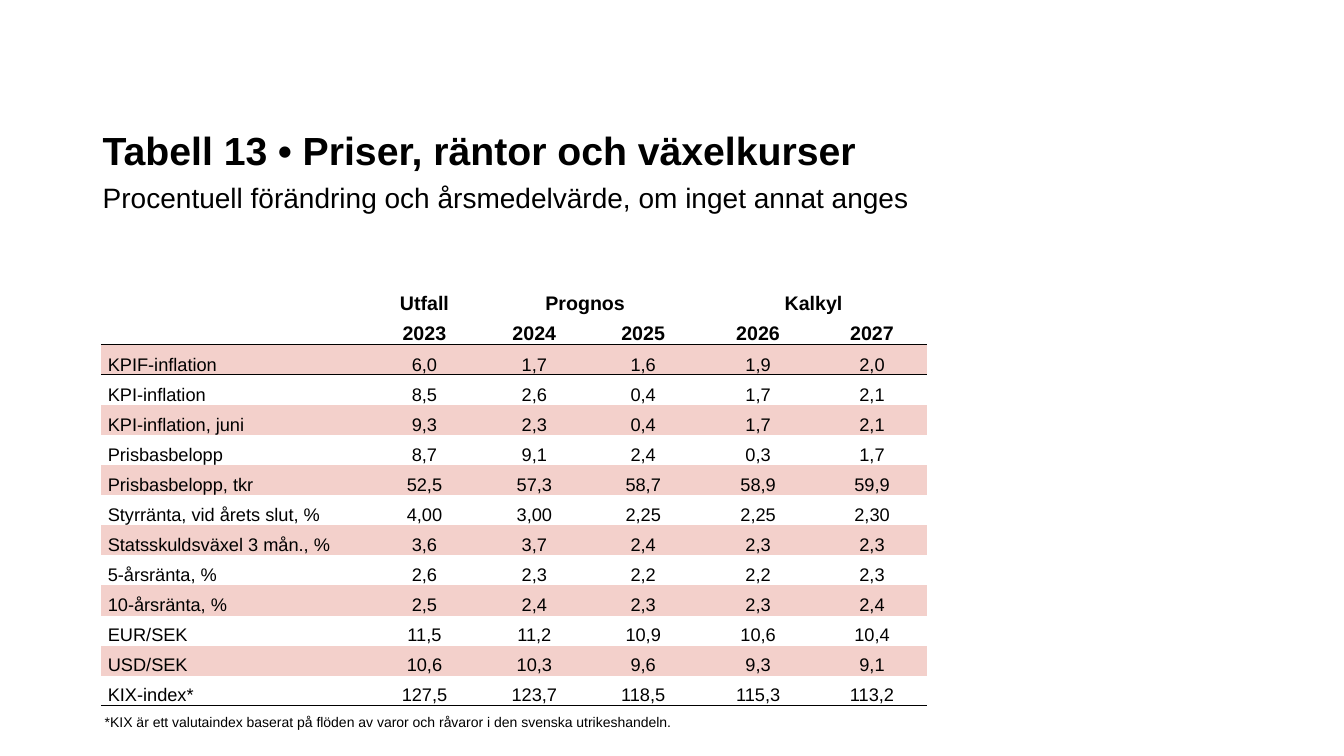
import pptx
import pptx.dml.color
import pptx.enum.text
import pptx.oxml
import pptx.oxml.ns
import pptx.util

TITLE = "Tabell 13 • Priser, räntor och växelkurser"
SUB = "Procentuell förändring och årsmedelvärde, om inget annat anges"
NOTE = ("*KIX är ett valutaindex baserat på flöden av varor och råvaror "
        "i den svenska utrikeshandeln.")
ROWS = [
    ("", "Utfall", "Prognos", "", "Kalkyl", ""),
    ("", "2023", "2024", "2025", "2026", "2027"),
    ("KPIF-inflation", "6,0", "1,7", "1,6", "1,9", "2,0"),
    ("KPI-inflation", "8,5", "2,6", "0,4", "1,7", "2,1"),
    ("KPI-inflation, juni", "9,3", "2,3", "0,4", "1,7", "2,1"),
    ("Prisbasbelopp", "8,7", "9,1", "2,4", "0,3", "1,7"),
    ("Prisbasbelopp, tkr", "52,5", "57,3", "58,7", "58,9", "59,9"),
    ("Styrränta, vid årets slut, %", "4,00", "3,00", "2,25", "2,25", "2,30"),
    ("Statsskuldsväxel 3 mån., %", "3,6", "3,7", "2,4", "2,3", "2,3"),
    ("5-årsränta, %", "2,6", "2,3", "2,2", "2,2", "2,3"),
    ("10-årsränta, %", "2,5", "2,4", "2,3", "2,3", "2,4"),
    ("EUR/SEK", "11,5", "11,2", "10,9", "10,6", "10,4"),
    ("USD/SEK", "10,6", "10,3", "9,6", "9,3", "9,1"),
    ("KIX-index*", "127,5", "123,7", "118,5", "115,3", "113,2"),
]
WIDTHS = (264, 114, 104, 112, 116, 110)
HEADS = 2
HIGH = 418
BLACK, PINK = "000000", "F3D0CB"
PLAIN = "{2D5ABB26-0587-4C30-8999-92F81FD0307C}"
PX = 9144
ALIGN = pptx.enum.text.PP_ALIGN
ANCHOR = pptx.enum.text.MSO_ANCHOR


def color(code):
    return pptx.dml.color.RGBColor.from_string(code)


def style(run, size, bold=False):
    run.font.name = "Arial"
    run.font.size = pptx.util.Pt(size)
    run.font.bold = bold
    run.font.color.rgb = color(BLACK)


def add_text(slide, box, text, fonts, wrap=True):
    frame = slide.shapes.add_textbox(*(n * PX for n in box)).text_frame
    frame.word_wrap = wrap
    para = frame.paragraphs[0]
    para.text = text
    for run, (size, bold) in zip(para.runs, fonts):
        style(run, size, bold)
    return frame


def add_rule(cell, side):
    line = pptx.oxml.parse_xml(
        f'<a:{side} {pptx.oxml.ns.nsdecls("a")} w="12700"><a:solidFill>'
        f'<a:srgbClr val="{BLACK}"/></a:solidFill></a:{side}>')
    cell._tc.get_or_add_tcPr().insert(0, line)


def fill_cell(cell, text, row, col):
    cell.margin_left = cell.margin_right = 7 * PX
    cell.margin_top = cell.margin_bottom = 0
    cell.vertical_anchor = ANCHOR.BOTTOM
    para = cell.text_frame.paragraphs[0]
    para.line_spacing = pptx.util.Pt(13)
    para.space_after = pptx.util.Pt(1)
    para.alignment = ALIGN.CENTER if col else ALIGN.LEFT
    if text:
        para.text = text
        head = row < HEADS
        style(para.runs[0], 14 if head else 13, head)
    if row >= HEADS and row % 2 == 0:
        cell.fill.solid()
        cell.fill.fore_color.rgb = color(PINK)
    else:
        cell.fill.background()
    if row in (HEADS - 1, len(ROWS) - 1):
        add_rule(cell, "lnB")
    if row == HEADS:
        add_rule(cell, "lnT")


def add_grid(slide):
    table = slide.shapes.add_table(
        len(ROWS), len(WIDTHS), 100 * PX, 282 * PX,
        sum(WIDTHS) * PX, HIGH * PX).table
    table.first_row = table.horz_banding = False
    table._tbl.tblPr.find(pptx.oxml.ns.qn("a:tableStyleId")).text = PLAIN
    for col, width in zip(table.columns, WIDTHS):
        col.width = width * PX
    for i, row in enumerate(ROWS):
        table.rows[i].height = HIGH * PX // len(ROWS)
        for j, text in enumerate(row):
            fill_cell(table.cell(i, j), text, i, j)
    for j in (2, 4):
        table.cell(0, j).merge(table.cell(0, j + 1))
    table.cell(0, 2).margin_right = 18 * PX


def main():
    deck = pptx.Presentation()
    deck.slide_width, deck.slide_height = 1333 * PX, 750 * PX
    slide = deck.slides.add_slide(deck.slide_layouts[6])
    head = add_text(slide, (92, 82, 1051, 135), f"{TITLE}\v{SUB}",
                    ((28, True), (20, False)))
    head.vertical_anchor = ANCHOR.BOTTOM
    head.paragraphs[0].line_spacing = 1.2
    head.paragraphs[0].space_after = pptx.util.Pt(4)
    add_grid(slide)
    add_text(slide, (94, 703, 589, 27), NOTE, ((10, False),), False)
    deck.save("out.pptx")


if __name__ == "__main__":
    main()
